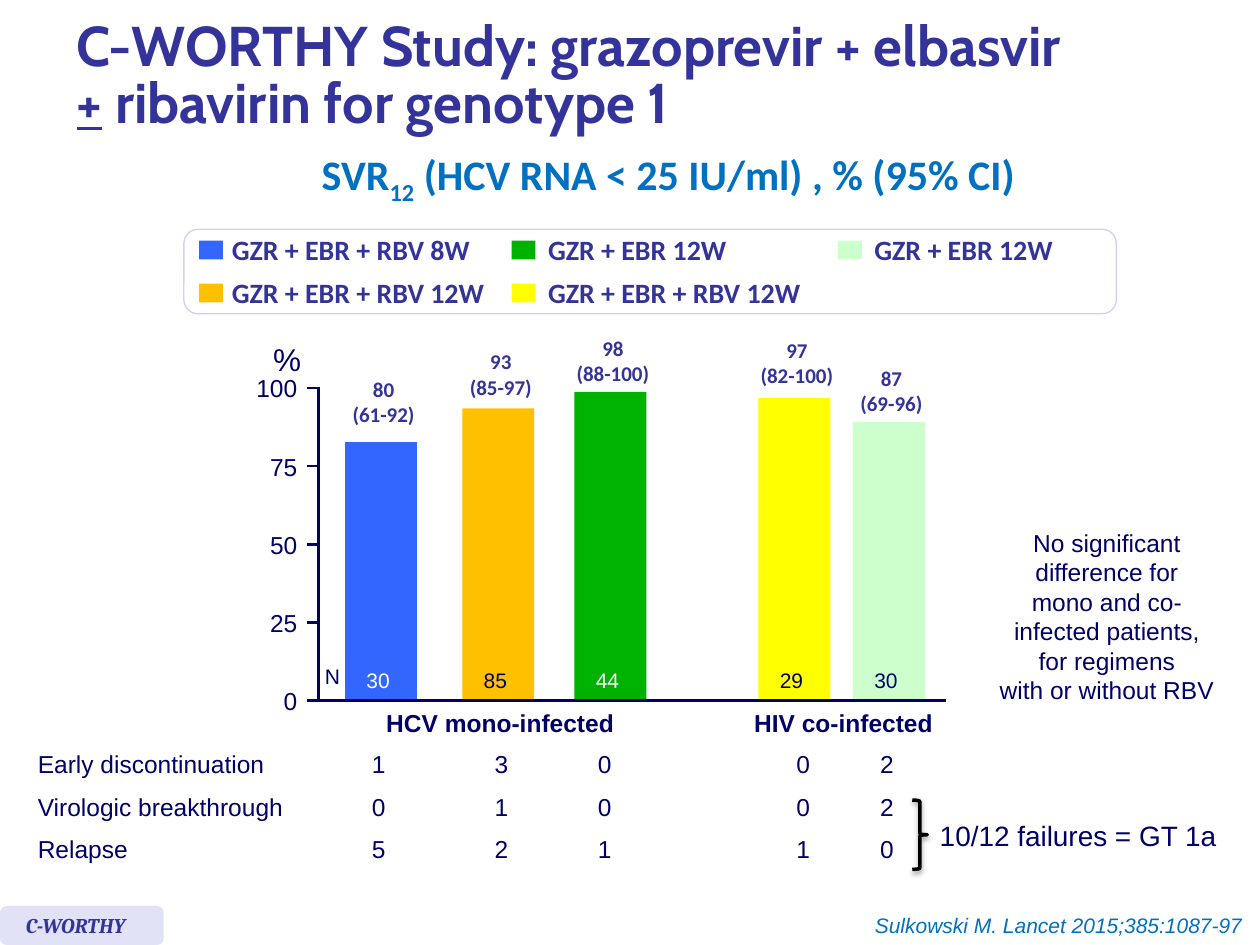
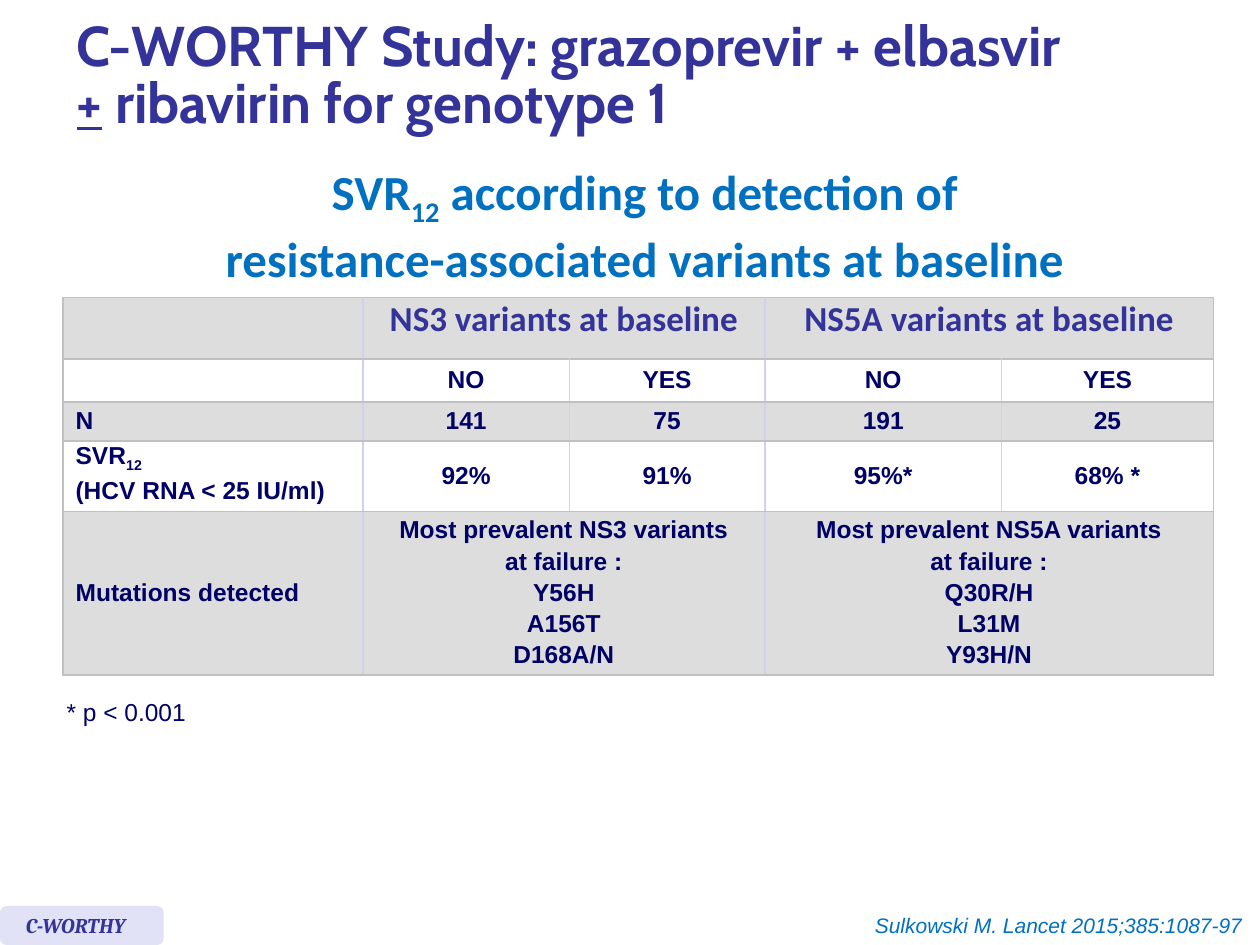
from lxml import etree
from pptx import Presentation
from pptx.dml.color import RGBColor
from pptx.enum.shapes import MSO_CONNECTOR, MSO_SHAPE
from pptx.enum.text import MSO_ANCHOR as ANC, MSO_AUTO_SIZE, PP_ALIGN as AL
from pptx.oxml.ns import qn
from pptx.util import Inches, Pt

NAVY, INDIGO, BLUE, WHITE = "000066", "333399", "0070C0", "FFFFFF"
LAVENDER, PALE, SILVER, GREY = "D0D0F0", "E2E2F6", "C0C0C0", "DDDDDD"
ROYAL, AMBER, GREEN, YELLOW, MINT = "3366FF", "FFC000", "00B200", "FFFF00", "CCFFCC"
NO_STYLE = "{2D5ABB26-0587-4C30-8999-92F81FD0307C}"
SUB12 = ("12", {"sub": True})


def rgb(color):
    return RGBColor.from_string(color)


def format_run(r, size=14, font="Arial", color=NAVY, bold=False, italic=False,
               underline=False, sub=False):
    f = r.font
    f.size, f.name, f.bold, f.italic, f.underline = Pt(size), font, bold, italic, underline
    f.color.rgb = rgb(color)
    if sub:
        r.font._element.set("baseline", "-25000")


def write(tf, text, align=AL.LEFT, spacing=None, before=0, **fmt):
    paragraphs = [text] if isinstance(text, str) else text
    for i, runs in enumerate(paragraphs):
        p = tf.add_paragraph() if i else tf.paragraphs[0]
        p.alignment = align
        p.space_before = Pt(before if i else 0)
        if spacing:
            p.line_spacing = spacing
        for item in [runs] if isinstance(runs, str) else runs:
            words, extra = (item, {}) if isinstance(item, str) else item
            if words == "\v":
                p.add_line_break()
                continue
            r = p.add_run()
            r.text = words
            format_run(r, **{**fmt, **extra})


def add_effects(sp, blur=0, dist=0, alpha=0):
    effects = etree.SubElement(sp.element.spPr, qn("a:effectLst"))
    if blur:
        shadow = etree.SubElement(effects, qn("a:outerShdw"), blurRad=str(Pt(blur)),
                                  dist=str(Pt(dist)), dir="5400000", rotWithShape="0")
        color = etree.SubElement(shadow, qn("a:srgbClr"), val="000000")
        etree.SubElement(color, qn("a:alpha"), val=str(alpha * 1000))


def set_borders(cell, **colors):
    tc_pr = cell._tc.get_or_add_tcPr()
    for side in "LRTB":
        ln = etree.SubElement(tc_pr, qn(f"a:ln{side}"), w=str(Pt(1)))
        fill = etree.SubElement(ln, qn("a:solidFill"))
        etree.SubElement(fill, qn("a:srgbClr"), val=colors.get(side, SILVER))


class Deck:
    heading = dict(font="Calibri", color=BLUE, bold=True, align=AL.CENTER)
    label = dict(font="Calibri", color=INDIGO, bold=True)

    def __init__(self):
        self.prs = Presentation()
        self.prs.slide_width, self.prs.slide_height = Inches(10), Inches(7.5)
        self.slide = None

    def new_slide(self):
        self.slide = self.prs.slides.add_slide(self.prs.slide_layouts[5])
        sp = self.slide.shapes.title
        sp.left, sp.top, sp.width, sp.height = map(Inches, (0.51, 0.08, 9.13, 1.07))
        tf = sp.text_frame
        tf.auto_size = MSO_AUTO_SIZE.NONE
        tf.vertical_anchor = ANC.MIDDLE
        write(tf, [["C-WORTHY Study: grazoprevir + elbasvir", "\v",
                    ("+", {"underline": True}), " ribavirin for genotype 1"]],
              spacing=0.85, size=32, font="Cabin", color=INDIGO, bold=True)
        self.text(6.58, 7.19, 3.38, 0.3, "Sulkowski M. Lancet 2015;385:1087-97",
                  wrap=True, align=AL.RIGHT, size=12, color=BLUE, italic=True)
        tag = self.shape(0, 7.19, 1.3, 0.31, PALE, MSO_SHAPE.ROUNDED_RECTANGLE)
        tag.text_frame.margin_left = Inches(0.19)
        tag.text_frame.vertical_anchor = ANC.MIDDLE
        write(tag.text_frame, "C-WORTHY", size=12, font="Cambria", color=INDIGO,
              bold=True, italic=True)

    def text(self, x, y, w, h, text, wrap=False, inset=True, anchor=ANC.TOP, **fmt):
        sp = self.slide.shapes.add_textbox(Inches(x), Inches(y), Inches(w), Inches(h))
        tf = sp.text_frame
        tf.word_wrap = wrap
        tf.vertical_anchor = anchor
        if not inset:
            tf.margin_left = tf.margin_right = tf.margin_top = tf.margin_bottom = 0
        write(tf, text, **fmt)

    def shape(self, x, y, w, h, fill=None, kind=MSO_SHAPE.RECTANGLE, line=None, weight=0.75):
        sp = self.slide.shapes.add_shape(kind, Inches(x), Inches(y), Inches(w), Inches(h))
        sp.shadow.inherit = False
        if fill:
            sp.fill.solid()
            sp.fill.fore_color.rgb = rgb(fill)
        else:
            sp.fill.background()
        if line:
            sp.line.color.rgb = rgb(line)
            sp.line.width = Pt(weight)
        else:
            sp.line.fill.background()
        return sp

    def line(self, x1, y1, x2, y2):
        cn = self.slide.shapes.add_connector(MSO_CONNECTOR.STRAIGHT, Inches(x1), Inches(y1),
                                             Inches(x2), Inches(y2))
        cn.line.color.rgb = rgb(NAVY)
        cn.line.width = Pt(1.5)
        add_effects(cn)

    def table(self, x, y, widths, heights):
        frame = self.slide.shapes.add_table(len(heights), len(widths), Inches(x), Inches(y),
                                            Inches(sum(widths)), Inches(sum(heights)))
        frame.element.find(".//" + qn("a:tableStyleId")).text = NO_STYLE
        table = frame.table
        table.first_row = table.horz_banding = False
        for column, w in zip(table.columns, widths):
            column.width = Inches(w)
        for row, h in zip(table.rows, heights):
            row.height = Inches(h)
        return table

    def cell(self, cell, text, fill=None, **fmt):
        cell.margin_top = cell.margin_bottom = 0
        cell.vertical_anchor = ANC.MIDDLE
        if fill:
            cell.fill.solid()
            cell.fill.fore_color.rgb = rgb(fill)
        else:
            cell.fill.background()
        if text:
            write(cell.text_frame, text, **fmt)


def add_legend(deck):
    deck.shape(1.46, 1.82, 7.4, 0.67, WHITE, MSO_SHAPE.ROUNDED_RECTANGLE, LAVENDER)
    columns = [(1.58, 0.26), (4.06, 0.29), (6.65, 0.29)]
    centres = [1.98, 2.32]
    entries = [(0, 0, ROYAL, "GZR + EBR + RBV 8W"), (0, 1, AMBER, "GZR + EBR + RBV 12W"),
               (1, 0, GREEN, "GZR + EBR 12W"), (1, 1, YELLOW, "GZR + EBR + RBV 12W"),
               (2, 0, MINT, "GZR + EBR 12W")]
    for col, row, color, name in entries:
        x, gap = columns[col]
        y = centres[row]
        deck.shape(x, y - 0.07, 0.19, 0.15, color)
        deck.text(x + gap, y - 0.15, 2.2, 0.3, name, wrap=True, inset=False,
                  anchor=ANC.MIDDLE, size=16, **deck.label)


def add_bars(deck):
    base, bar_width = 5.55, 0.57
    bars = [(2.74, 2.04, ROYAL, "80", "(61-92)", 2.94, "30", WHITE),
            (3.67, 2.31, AMBER, "93", "(85-97)", 2.72, "85", NAVY),
            (4.56, 2.44, GREEN, "98", "(88-100)", 2.61, "44", WHITE),
            (6.02, 2.39, YELLOW, "97", "(82-100)", 2.63, "29", NAVY),
            (6.77, 2.2, MINT, "87", "(69-96)", 2.85, "30", NAVY)]
    for x, height, color, rate, interval, label_top, count, count_color in bars:
        deck.shape(x, base - height, bar_width, height, color)
        deck.text(x + bar_width / 2 - 0.38, label_top, 0.8, 0.51, [rate, interval],
                  align=AL.CENTER, size=12, **deck.label)
        deck.text(x + 0.07, 5.25, 0.39, 0.3, count, size=12, color=count_color)
    deck.text(2.48, 5.22, 0.32, 0.3, "N", size=12)


def add_axes(deck):
    origin, step = 5.56, 0.62
    deck.line(2.44, origin, 7.51, origin)
    deck.line(2.53, origin - 4 * step, 2.53, origin)
    for i in range(5):
        y = origin - i * step
        if i:
            deck.line(2.44, y, 2.54, y)
        deck.text(1.96, y - 0.11, 0.4, 0.22, str(25 * i), wrap=True, inset=False,
                  anchor=ANC.MIDDLE, align=AL.RIGHT)
    deck.text(2.07, 2.65, 0.42, 0.33, "%", size=18)
    for x, w, group in [(2.96, 2.02, "HCV mono-infected"), (5.88, 1.63, "HIV co-infected")]:
        deck.text(x, 5.57, w, 0.34, group, align=AL.CENTER, bold=True)


def add_failures(deck):
    rows = [("Early discontinuation", "1", "3", "0", "", "0", "2"),
            ("Virologic breakthrough", "0", "1", "0", "", "0", "2"),
            ("Relapse", "5", "2", "1", "", "1", "0")]
    table = deck.table(0.2, 5.9, [2.3, 1.01, 0.94, 0.7, 0.87, 0.71, 0.62], [0.34] * 3)
    for i, row in enumerate(rows):
        for j, value in enumerate(row):
            deck.cell(table.cell(i, j), value, align=AL.CENTER if j else AL.LEFT)
    brace = deck.shape(7.24, 6.35, 0.12, 0.55, None, MSO_SHAPE.RIGHT_BRACE, "000000", 2)
    brace.element.spPr.remove(brace.element.spPr.find(qn("a:effectLst")))
    add_effects(brace, blur=3.1, dist=1.6, alpha=38)
    deck.text(7.36, 6.45, 2.42, 0.37, "10/12 failures = GT 1a", size=16)


def response_slide(deck):
    deck.new_slide()
    deck.text(2.41, 1.26, 5.79, 0.44, [["SVR", SUB12, " (HCV RNA < 25 IU/ml) , % (95% CI)"]],
              spacing=Pt(23.6), size=24, **deck.heading)
    add_legend(deck)
    add_bars(deck)
    add_axes(deck)
    add_failures(deck)
    deck.text(7.57, 4.14, 2.43, 1.51,
              ["No significant", "difference for", "mono and co-", "infected patients,",
               "for regimens", "with or without RBV"], wrap=True, align=AL.CENTER)


def variants_slide(deck):
    deck.new_slide()
    deck.text(1.14, 1.23, 7.95, 1.04,
              [["SVR", SUB12, " according to detection of"],
               "resistance-associated variants at baseline"],
              wrap=True, size=28, **deck.heading)
    rows = [["", "NS3 variants at baseline", "", "NS5A variants at baseline", ""],
            ["", "NO", "YES", "NO", "YES"],
            ["N", "141", "75", "191", "25"],
            [[["SVR", SUB12], "(HCV RNA < 25 IU/ml)"], "92%", "91%", "95%*", "68% *"],
            ["Mutations detected",
             ["Most prevalent NS3 variants", "at failure :", "Y56H", "A156T", "D168A/N"], "",
             ["Most prevalent NS5A variants", "at failure :", "Q30R/H", "L31M", "Y93H/N"], ""]]
    table = deck.table(0.5, 2.36, [2.38, 1.64, 1.55, 1.88, 1.68],
                       [0.49, 0.34, 0.31, 0.56, 1.3])
    for i in (0, 4):
        for j in (1, 3):
            table.cell(i, j).merge(table.cell(i, j + 1))
    for i, row in enumerate(rows):
        style = dict(deck.label, size=20) if i == 0 else dict(bold=True)
        for j, value in enumerate(row):
            cell = table.cell(i, j)
            last = j + cell.span_width == len(row) if cell.is_merge_origin else j == len(row) - 1
            set_borders(cell, L=LAVENDER if j else SILVER, R=SILVER if last else LAVENDER)
            deck.cell(cell, value, fill=WHITE if i % 2 else GREY, spacing=Pt(15), before=2.8,
                      align=AL.CENTER if j else AL.LEFT, **style)
    deck.text(0.43, 5.48, 1.16, 0.34, "* p < 0.001")


def main():
    deck = Deck()
    response_slide(deck)
    variants_slide(deck)
    deck.prs.save("out.pptx")


if __name__ == "__main__":
    main()
